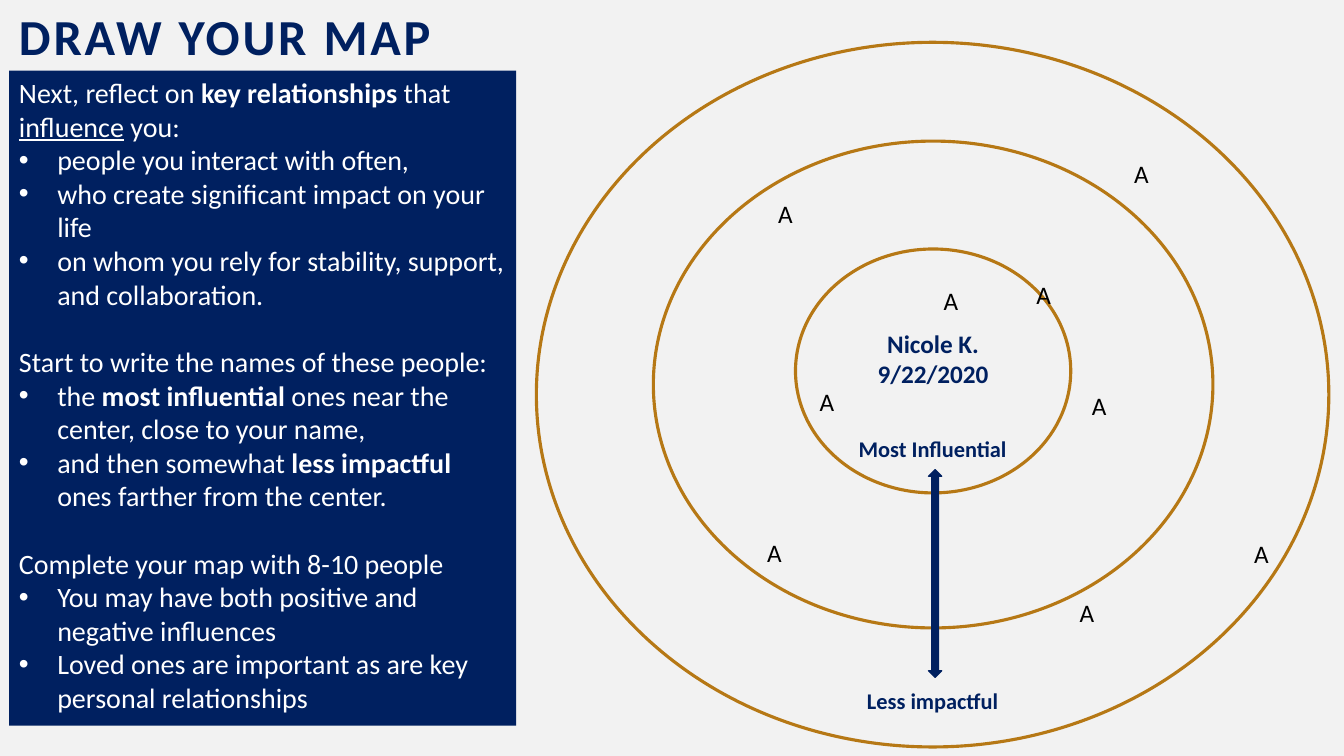
from dataclasses import dataclass

from lxml.etree import SubElement
from pptx import Presentation
from pptx.dml.color import RGBColor
from pptx.enum.shapes import MSO_SHAPE
from pptx.enum.text import MSO_ANCHOR, MSO_AUTO_SIZE, PP_ALIGN
from pptx.oxml.ns import qn
from pptx.util import Inches, Pt


@dataclass(frozen=True)
class Theme:
    font: str = "Calibri"
    paper: str = "F2F2F2"
    navy: str = "002060"
    gold: str = "B67815"
    white: str = "FFFFFF"
    black: str = "000000"
    title: int = 36
    body: int = 20
    name: int = 18
    label: int = 16
    gap: int = 24


def paint(fill, color):
    fill.solid()
    fill.fore_color.rgb = RGBColor.from_string(color)


def bullet(para):
    props = para._p.get_or_add_pPr()
    props.set("marL", str(Inches(0.38)))
    props.set("indent", str(-Inches(0.38)))
    SubElement(props, qn("a:buFont")).set("typeface", "Arial")
    SubElement(props, qn("a:buChar")).set("char", "•")


def split(text):
    """Yield (words, bold, underline); * marks bold and _ marks underline."""
    for i, part in enumerate(text.split("*")):
        for j, words in enumerate(part.split("_")):
            if words:
                yield words, i % 2 == 1, j % 2 == 1


def write(frame, lines, font, size, color, bold=False, align=PP_ALIGN.LEFT,
          gap=0, track=0):
    """Fill a frame; "- " starts a bullet, "+ " a paragraph with a gap above."""
    frame.word_wrap = True
    frame.auto_size = MSO_AUTO_SIZE.SHAPE_TO_FIT_TEXT
    frame.vertical_anchor = MSO_ANCHOR.TOP
    for i, line in enumerate(lines):
        para = frame.add_paragraph() if i else frame.paragraphs[0]
        para.alignment = align
        if line.startswith("- "):
            bullet(para)
        if line.startswith("+ "):
            para.space_before = Pt(gap)
        for words, strong, under in split(line.removeprefix("- ").removeprefix("+ ")):
            run = para.add_run()
            run.text = words
            run.font.name = font
            run.font.size = Pt(size)
            run.font.bold = bold or strong
            run.font.underline = under
            run.font.color.rgb = RGBColor.from_string(color)
            if track:
                run.font._element.set("spc", str(track * 100))


class Deck:
    def __init__(self, theme):
        self.theme = theme
        self.prs = Presentation()
        self.prs.slide_width = Inches(13.33)
        self.prs.slide_height = Inches(7.5)
        self.slide = self.prs.slides.add_slide(self.prs.slide_layouts[6])
        paint(self.slide.background.fill, theme.paper)

    def shape(self, kind, box, fill=None, line=None, width=1):
        item = self.slide.shapes.add_shape(kind, *map(Inches, box))
        item.shadow.inherit = False
        if fill:
            paint(item.fill, fill)
        else:
            item.fill.background()
        if line:
            paint(item.line.fill, line)
            item.line.width = Pt(width)
        else:
            item.line.fill.background()
        return item

    def ring(self, box):
        self.shape(MSO_SHAPE.OVAL, box, line=self.theme.gold, width=2.25)

    def text(self, box, *lines, **style):
        item = self.slide.shapes.add_textbox(*map(Inches, box))
        write(item.text_frame, lines, self.theme.font, **style)

    def panel(self, box, lines):
        look = self.theme
        item = self.shape(MSO_SHAPE.RECTANGLE, box, fill=look.navy)
        write(item.text_frame, lines, look.font, look.body, look.white, gap=look.gap)

    def arrow(self, box):
        navy = self.theme.navy
        self.shape(MSO_SHAPE.UP_DOWN_ARROW, box, fill=navy, line=navy)


STEPS = [
    "Next, reflect on *key relationships* that _influence_ you:",
    "- people you interact with often,",
    "- who create significant impact on your life",
    "- on whom you rely for stability, support, and collaboration.",
    "+ Start to write the names of these people:",
    "- the *most influential *ones near the center, close to your name,",
    "- and then somewhat *less impactful *ones farther from the center.",
    "+ Complete your map with 8-10 people",
    "- You may have both positive and negative influences",
    "- Loved ones are important as are key personal relationships",
]
RINGS = [(7.89, 2.47, 2.73, 2.42), (6.48, 1.4, 5.55, 4.83), (5.32, 0.42, 7.86, 6.99)]
PEOPLE = [(9.26, 2.78), (7.51, 5.28), (8.03, 3.78), (10.18, 2.72), (12.34, 5.29),
          (7.62, 1.92), (10.73, 3.82), (11.15, 1.52), (10.61, 5.88)]


def main():
    look = Theme()
    deck = Deck(look)
    for box in RINGS:
        deck.ring(box)
    deck.panel((0.09, 0.7, 5.03, 6.5), STEPS)
    deck.text((0.09, 0, 5.3, 0.71), "DRAW YOUR MAP",
              size=look.title, color=look.navy, bold=True, track=2)

    mid = dict(color=look.navy, bold=True, align=PP_ALIGN.CENTER)
    deck.text((8.33, 3.21, 1.85, 0.71), "Nicole K.", "9/22/2020", size=look.name, **mid)
    deck.text((8.17, 4.27, 2.16, 0.37), "Most Influential", size=look.label, **mid)
    deck.text((8.28, 6.77, 1.94, 0.37), "Less impactful", size=look.label, **mid)
    deck.arrow((9.21, 4.66, 0.13, 2.06))

    for left, top in PEOPLE:
        deck.text((left, top, 0.52, 0.4), "A", size=look.name, color=look.black)
    deck.prs.save("out.pptx")


if __name__ == "__main__":
    main()
